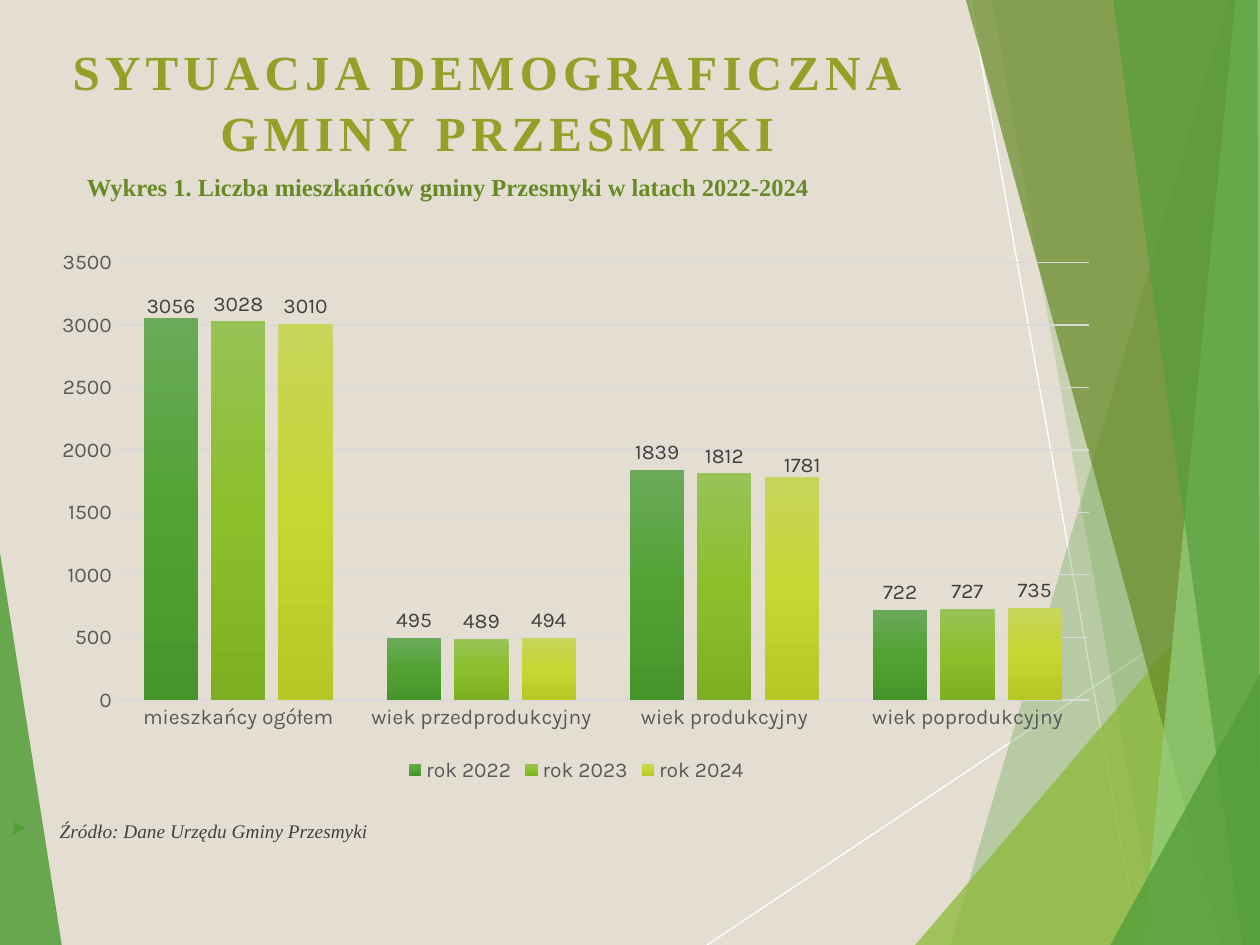
from dataclasses import dataclass

from lxml import etree
from pptx import Presentation
from pptx import util as u
from pptx.chart import data as chart_data
from pptx.dml import color
from pptx.enum import chart as chart_enum, shapes, text
from pptx.oxml import ns

Pt = u.Pt


@dataclass(frozen=True)
class Theme:
    background: str = "E3DED1"
    white: str = "FFFFFF"
    green: str = "549E39"
    lime: str = "8AB833"
    moss: str = "678A26"
    mint: str = "93D07D"
    title: str = "94A027"
    dark: str = "404040"
    grey: str = "595959"
    grid: str = "D9D9D9"
    serif: str = "Times New Roman"
    sans: str = "Karla"
    title_size: float = 28
    subtitle_size: float = 14
    chart_size: float = 12
    source_size: float = 11


THEME = Theme()
WIDTH, HEIGHT = 720, 540

# Fill, opacity in percent, corner points
PANELS = [
    (THEME.green, 85, [(0, 316), (35.3, 540), (0, 540)]),
    (THEME.green, 30, [(702, 0), (543, 540), (720, 540), (720, 0)]),
    (THEME.green, 20, [(567, 0), (662, 540), (720, 540), (720, 0)]),
    (THEME.lime, 72, [(523, 540), (720, 309), (720, 540)]),
    (THEME.moss, 70, [(552, 0), (698.5, 540), (720, 540), (720, 0)]),
    (THEME.mint, 70, [(706, 0), (653, 540), (720, 540), (720, 0)]),
    (THEME.green, 65, [(636, 0), (710, 540), (720, 540), (718.5, 0)]),
    (THEME.green, 80, [(634.5, 540), (720, 385), (720, 540)]),
]
RAYS = [(404, 540, 720, 329), (554.5, 0, 651, 540)]

CATEGORIES = ["mieszkańcy ogółem", "wiek przedprodukcyjny",
              "wiek produkcyjny", "wiek poprodukcyjny"]
# Name, values, gradient from top to bottom
SERIES = [
    ("rok 2022", (3056, 495, 1839, 722), ("6BAA59", "52A334", "46952A")),
    ("rok 2023", (3028, 489, 1812, 727), ("98C256", "8CBF2C", "7EAF22")),
    ("rok 2024", (3010, 494, 1781, 735), ("C7D55B", "C6D633", "B7C725")),
]
# (series, point): label shift as a share of the chart
LABEL_SHIFTS = {(0, 0): {"x": 0, "y": 0.01}, (2, 2): {"x": 0.01, "y": 0.01}}


def rgb(value):
    return color.RGBColor.from_string(value)


def add_xml(parent, tag, **attributes):
    return etree.SubElement(parent, ns.qn(tag), {k: str(v) for k, v in attributes.items()})


def style_font(font, size, value, name, bold=False, italic=False):
    font.size, font.name, font.bold, font.italic = Pt(size), name, bold, italic
    font.color.rgb = rgb(value)


def add_backdrop(slide):
    for x1, y1, x2, y2 in RAYS:
        ray = slide.shapes.add_connector(
            shapes.MSO_CONNECTOR.STRAIGHT, Pt(x1), Pt(y1), Pt(x2), Pt(y2))
        ray.line.color.rgb = rgb(THEME.white)
        ray.line.width = Pt(0.75)
        add_xml(ray._element.spPr, "a:effectLst")
    for fill, opacity, corners in PANELS:
        start, *others = [(Pt(x), Pt(y)) for x, y in corners]
        builder = slide.shapes.build_freeform(*start, scale=1.0)
        builder.add_line_segments(others, close=True)
        panel = builder.convert_to_shape()
        panel.shadow.inherit = False
        panel.line.fill.background()
        panel.fill.solid()
        panel.fill.fore_color.rgb = rgb(fill)
        rgb_element = panel._element.spPr.find(".//" + ns.qn("a:srgbClr"))
        add_xml(rgb_element, "a:alpha", val=opacity * 1000)


def add_text(slide, box, wording, size, value, **emphasis):
    shape = slide.shapes.add_textbox(*map(Pt, box))
    frame = shape.text_frame
    frame.word_wrap = True
    frame.vertical_anchor = text.MSO_ANCHOR.TOP
    frame.text = wording
    paragraph = frame.paragraphs[0]
    for run in paragraph.runs:
        style_font(run.font, size, value, THEME.serif, **emphasis)
    return paragraph


def add_title(slide, box):
    paragraph = add_text(slide, box, "SYTUACJA DEMOGRAFICZNA \vGMINY PRZESMYKI",
                         THEME.title_size, THEME.title, bold=True)
    paragraph.alignment = text.PP_ALIGN.CENTER
    paragraph.line_spacing = 1.04
    for run in paragraph.runs:
        run.font._element.set("spc", "300")


def add_source(slide, box):
    paragraph = add_text(slide, box, "Źródło: Dane Urzędu Gminy Przesmyki",
                         THEME.source_size, THEME.dark, italic=True)
    paragraph.space_before = Pt(10)
    properties = paragraph._element.get_or_add_pPr()
    properties.set("marL", str(Pt(27)))
    properties.set("indent", str(-Pt(27)))
    bullet_color = add_xml(properties, "a:buClr")
    add_xml(bullet_color, "a:srgbClr", val=THEME.green)
    add_xml(properties, "a:buSzPct", val=80000)
    add_xml(properties, "a:buChar", char="▶")


def add_layout(parent, index, **numbers):
    """Insert a manual chart layout as the child at the given index."""
    layout = etree.Element(ns.qn("c:layout"))
    manual = add_xml(layout, "c:manualLayout")
    if "w" in numbers:
        add_xml(manual, "c:layoutTarget", val="inner")
        add_xml(manual, "c:xMode", val="edge")
        add_xml(manual, "c:yMode", val="edge")
    for key, number in numbers.items():
        add_xml(manual, "c:" + key, val=number)
    parent.insert(index, layout)


def fill_gradient(series, stops):
    series.format.fill.gradient()
    series.format.fill.gradient_angle = 270
    stop_list = series._element.find(".//" + ns.qn("a:gsLst"))
    for old in list(stop_list):
        stop_list.remove(old)
    for index, value in enumerate(stops):
        stop = add_xml(stop_list, "a:gs", pos=index * 50000)
        add_xml(stop, "a:srgbClr", val=value)


def add_population_chart(slide, box):
    data = chart_data.CategoryChartData()
    data.categories = CATEGORIES
    for name, values, _ in SERIES:
        data.add_series(name, values)
    chart = slide.shapes.add_chart(
        chart_enum.XL_CHART_TYPE.COLUMN_CLUSTERED, *map(Pt, box), data).chart
    style_font(chart.font, THEME.chart_size, THEME.grey, THEME.sans)
    chart.has_title = False
    chart.has_legend = True
    chart.legend.position = chart_enum.XL_LEGEND_POSITION.BOTTOM
    chart.legend.include_in_layout = False

    # Axes
    for axis in (chart.category_axis, chart.value_axis):
        axis.major_tick_mark = axis.minor_tick_mark = chart_enum.XL_TICK_MARK.NONE
    chart.category_axis.format.line.color.rgb = rgb(THEME.grid)
    chart.category_axis.format.line.width = Pt(1)
    values_axis = chart.value_axis
    values_axis.minimum_scale, values_axis.maximum_scale = 0, 3500
    values_axis.major_unit = 500
    values_axis.format.line.fill.background()
    values_axis.major_gridlines.format.line.color.rgb = rgb(THEME.grid)
    values_axis.major_gridlines.format.line.width = Pt(0.75)

    # Columns and their labels
    plot = chart.plots[0]
    plot.vary_by_categories = False
    plot.gap_width, plot.overlap = 100, -24
    for series, (_, _, stops) in zip(plot.series, SERIES):
        fill_gradient(series, stops)
        labels = series.data_labels
        labels.show_value = True
        labels.position = chart_enum.XL_LABEL_POSITION.OUTSIDE_END
        style_font(labels.font, THEME.chart_size, THEME.dark, THEME.sans)
    for (series_index, point_index), shift in LABEL_SHIFTS.items():
        series = plot.series[series_index]
        label = series.points[point_index].data_label
        label.position = chart_enum.XL_LABEL_POSITION.OUTSIDE_END
        style_font(label.font, THEME.chart_size, THEME.dark, THEME.sans)
        add_layout(series._element.find(".//" + ns.qn("c:dLbl")), 1, **shift)

    # Plot area inside the chart
    plot_area = chart._chartSpace.chart.plotArea
    for old in plot_area.findall(ns.qn("c:layout")):
        plot_area.remove(old)
    add_layout(plot_area, 0, x=0.07, y=0.04, w=0.91, h=0.8)


def main():
    presentation = Presentation()
    presentation.slide_width, presentation.slide_height = Pt(WIDTH), Pt(HEIGHT)
    slide = presentation.slides.add_slide(presentation.slide_layouts[6])
    slide.background.fill.solid()
    slide.background.fill.fore_color.rgb = rgb(THEME.background)
    add_backdrop(slide)
    add_title(slide, (24, 19, 520.5, 66))
    add_population_chart(slide, (24, 137.5, 610.5, 312.5))
    add_source(slide, (0, 464.5, 654.5, 34))
    add_text(slide, (42.5, 95, 597, 24.5),
             "Wykres 1. Liczba mieszkańców gminy Przesmyki w latach 2022-2024",
             THEME.subtitle_size, THEME.moss, bold=True)
    presentation.save("out.pptx")


if __name__ == "__main__":
    main()
